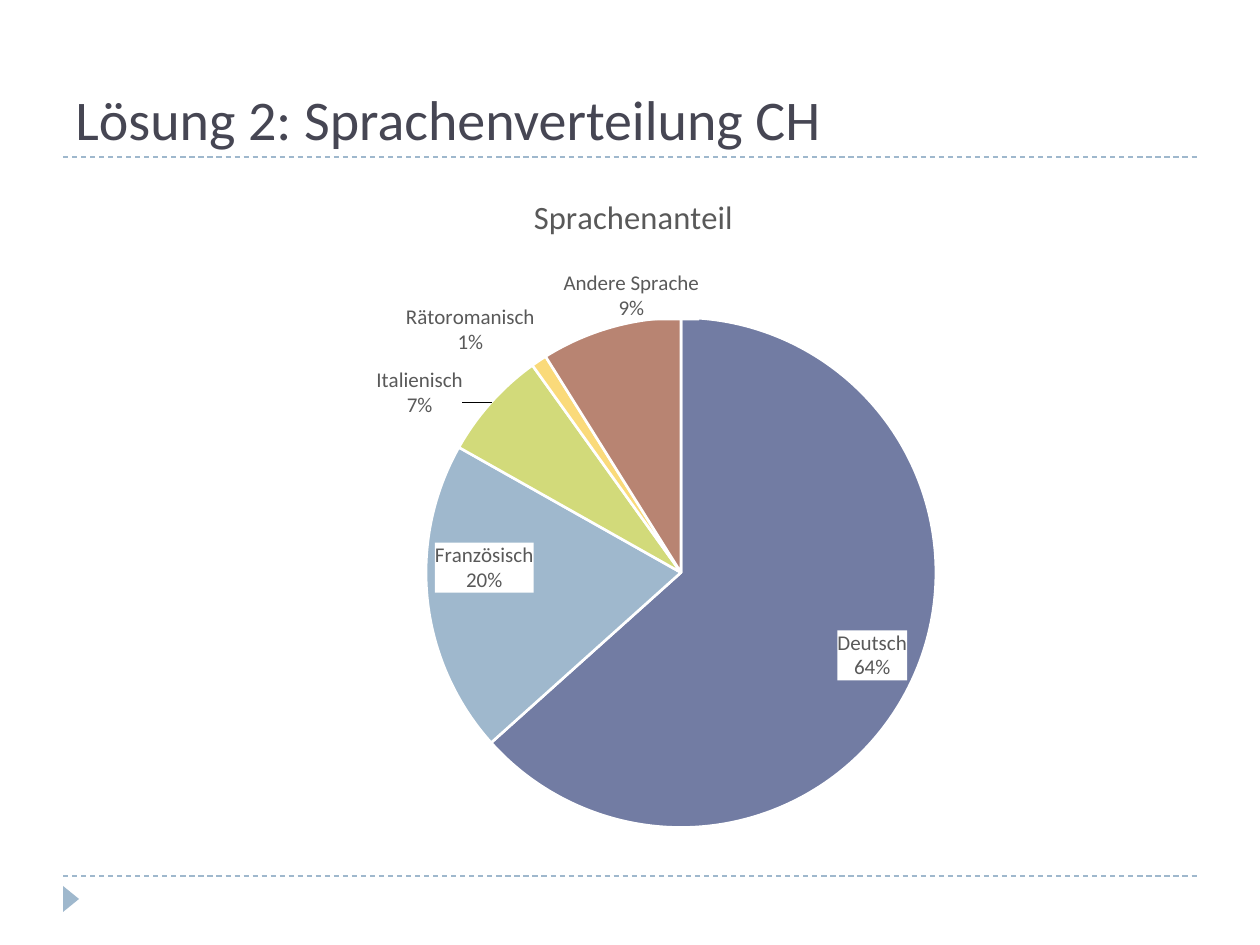
from lxml import etree
from pptx import Presentation
from pptx.chart.data import CategoryChartData
from pptx.dml.color import RGBColor
from pptx.enum.chart import XL_CHART_TYPE
from pptx.enum.dml import MSO_LINE
from pptx.enum.shapes import MSO_CONNECTOR, MSO_SHAPE
from pptx.enum.text import MSO_ANCHOR
from pptx.oxml import parse_xml
from pptx.oxml.ns import nsdecls, qn
from pptx.util import Pt

PX = 914400 / 126
FONT = "Calibri"
TITLE = RGBColor(0x46, 0x46, 0x53)
GREY = RGBColor(0x59, 0x59, 0x59)
WHITE = RGBColor(0xFF, 0xFF, 0xFF)
INDIGO = RGBColor(0x72, 0x7C, 0xA3)
BLUE = RGBColor(0x9F, 0xB8, 0xCD)
LIME = RGBColor(0xD2, 0xDA, 0x7A)
YELLOW = RGBColor(0xFA, 0xDA, 0x7A)
BROWN = RGBColor(0xB8, 0x84, 0x72)

# language, percent, colour, label position, label offset (share of the chart)
LANGUAGES = [
    ("Deutsch", 64, INDIGO, "inEnd", (0, 0.01)),
    ("Französisch", 20, BLUE, "inEnd", (0, -0.01)),
    ("Italienisch", 7, LIME, "outEnd", (-0.02, 0.03)),
    ("Rätoromanisch", 1, YELLOW, "outEnd", None),
    ("Andere Sprache", 9, BROWN, "outEnd", (0.08, 0)),
]


def px(*lengths):
    return [round(n * PX) for n in lengths]


def add_text(tf, text, *, size, color):
    p = tf.paragraphs[0]
    r = p.add_run()
    r.text = text
    r.font.name = FONT
    r.font.size = Pt(size)
    r.font.bold = False
    r.font.color.rgb = color


prs = Presentation()
prs.slide_width, prs.slide_height = px(1260, 945)
s = prs.slides.add_slide(prs.slide_layouts[6])

# Dashed rules and corner marker
for y in (876, 157):
    line = s.shapes.add_connector(MSO_CONNECTOR.STRAIGHT, *px(63, y, 1197, y))
    line.line.color.rgb = BLUE
    line.line.width = Pt(0.75)
    line.line.dash_style = MSO_LINE.DASH
    etree.SubElement(line._element.spPr, qn("a:effectLst"))

marker = s.shapes.add_shape(MSO_SHAPE.ISOSCELES_TRIANGLE, *px(58, 891, 26, 16))
marker.rotation = 90
marker.shadow.inherit = False
marker.fill.solid()
marker.fill.fore_color.rgb = BLUE
marker.line.fill.background()

# Title
tf = s.shapes.add_textbox(*px(63, 21, 1134, 137)).text_frame
tf.word_wrap = True
tf.vertical_anchor = MSO_ANCHOR.BOTTOM
add_text(tf, "Lösung 2: Sprachenverteilung CH", size=32, color=TITLE)

# Pie chart
data = CategoryChartData()
data.categories = [row[0] for row in LANGUAGES]
data.add_series("Series 1", [row[1] for row in LANGUAGES])
chart = s.shapes.add_chart(XL_CHART_TYPE.PIE, *px(63, 168, 1134, 680), data).chart
chart.has_legend = False
chart.font.name = FONT
chart.font.size = Pt(10)
chart.has_title = True
add_text(chart.chart_title.text_frame, "Sprachenanteil", size=18.6, color=GREY)
chart.plots[0].vary_by_categories = True
series = chart.plots[0].series[0]

for i, (_, _, color, _, _) in enumerate(LANGUAGES):
    fmt = series.points[i].format
    fmt.fill.solid()
    fmt.fill.fore_color.rgb = color
    fmt.line.color.rgb = WHITE
    fmt.line.width = Pt(1.5)

# Manual places of the chart title and the pie
title = chart.chart_title._element
for old in title.findall(qn("c:layout")):
    title.remove(old)
title.find(qn("c:tx")).addnext(parse_xml(
    f'<c:layout {nsdecls("c")}><c:manualLayout><c:xMode val="edge"/>'
    '<c:yMode val="edge"/><c:x val="0.41"/><c:y val="0.03"/>'
    '</c:manualLayout></c:layout>'))
plot_area = chart._chartSpace.chart.plotArea
for old in plot_area.findall(qn("c:layout")):
    plot_area.remove(old)
plot_area.insert(0, parse_xml(
    f'<c:layout {nsdecls("c")}><c:manualLayout><c:layoutTarget val="inner"/>'
    '<c:xMode val="edge"/><c:yMode val="edge"/><c:x val="0.32"/>'
    '<c:y val="0.22"/><c:w val="0.45"/><c:h val="0.75"/>'
    '</c:manualLayout></c:layout>'))

# Data labels: the rounded shares add up to 101, so they show as values with a % sign
label_style = (
    '<c:numFmt formatCode="0&quot;%&quot;" sourceLinked="0"/>'
    f'<c:spPr><a:solidFill><a:srgbClr val="{WHITE}"/></a:solidFill>'
    '<a:ln><a:noFill/></a:ln></c:spPr>'
    '<c:txPr><a:bodyPr/><a:p><a:pPr><a:defRPr sz="1200" b="0">'
    f'<a:solidFill><a:srgbClr val="{GREY}"/></a:solidFill>'
    f'<a:latin typeface="{FONT}"/></a:defRPr></a:pPr></a:p></c:txPr>')
label_parts = (
    '<c:showLegendKey val="0"/><c:showVal val="1"/><c:showCatName val="1"/>'
    '<c:showSerName val="0"/><c:showPercent val="0"/><c:showBubbleSize val="0"/>'
    '<c:separator>\n</c:separator>')
labels = ""
for i, (_, _, _, position, offset) in enumerate(LANGUAGES):
    layout = ""
    if offset:
        layout = ('<c:layout><c:manualLayout>'
                  f'<c:x val="{offset[0]}"/><c:y val="{offset[1]}"/>'
                  '</c:manualLayout></c:layout>')
    labels += (f'<c:dLbl><c:idx val="{i}"/>{layout}{label_style}'
               f'<c:dLblPos val="{position}"/>{label_parts}</c:dLbl>')
series._element.find(qn("c:cat")).addprevious(parse_xml(
    f'<c:dLbls {nsdecls("c", "a")}>{labels}{label_style}'
    f'<c:dLblPos val="outEnd"/>{label_parts}'
    '<c:showLeaderLines val="1"/></c:dLbls>'))

prs.save("out.pptx")
